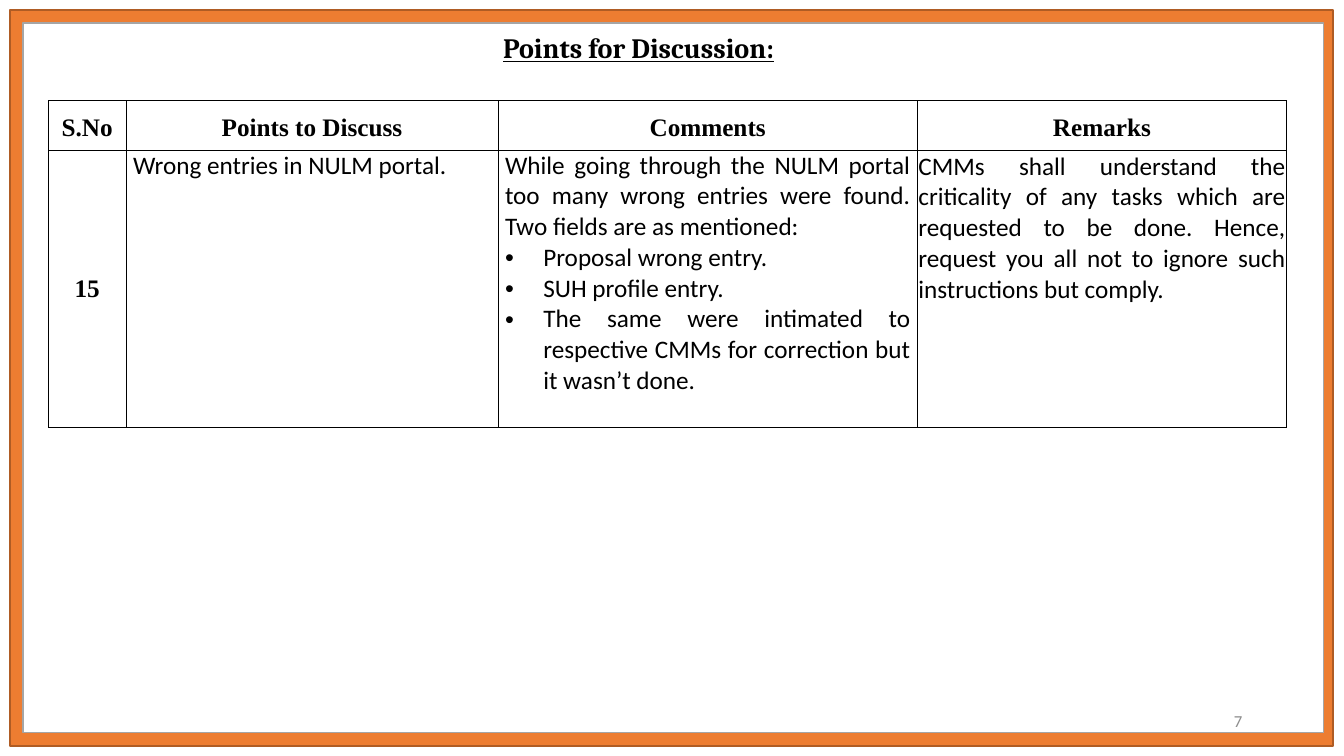
from lxml import etree
from pptx import Presentation
from pptx import util as u
from pptx.dml.color import RGBColor
from pptx.enum import shapes, text
from pptx.oxml import parse_xml
from pptx.oxml.ns import nsdecls, qn

FRAME = [
    ((0.1, 0.1, 13.12, 7.3), "ED7D31", "AF5C24"),
    ((0.23, 0.23, 12.9, 7.04), "FFFFFF", "A5A5A5"),
]
TITLE = "Points for Discussion:"
PAGE = "7"
HEADERS = ["S.No", "Points to Discuss", "Comments", "Remarks"]
NUMBER = "15"
POINT = "Wrong entries in NULM portal."
COMMENT = ("While going through the NULM portal too many wrong entries were found. "
           "Two fields are as mentioned:")
BULLETS = [
    "Proposal wrong entry.",
    "SUH profile entry.",
    "The same were intimated to respective CMMs for correction but it wasn’t done.",
]
REMARK = ("CMMs shall understand the criticality of any tasks which are requested to be done. "
          "Hence, request you all not to ignore such instructions but comply.")
COLS = [0.77, 3.69, 4.16, 3.66]
ROWS = [0.49, 2.75]
HEAD_INSETS = (0.06, 0, 0.06, 0)
TEXT_INSETS = (0.07, 0, 0.07, 0)
TIGHT_INSETS = (0.01, 0.01, 0.01, 0)
ALIGN = text.PP_ALIGN
ANCHOR = text.MSO_ANCHOR


def rgb(value):
    return RGBColor.from_string(value)


def inches(values):
    return [u.Inches(v) for v in values]


def write(tf, lines, size=18, font="Calibri", color="000000", bold=False,
          underline=False, align=ALIGN.CENTER, spacing=None, bullets_from=None):
    for i, line in enumerate(lines):
        p = tf.paragraphs[0] if i == 0 else tf.add_paragraph()
        p.alignment = align
        if spacing:
            p.line_spacing = spacing
        if bullets_from is not None and i >= bullets_from:
            pPr = p._p.get_or_add_pPr()
            pPr.set("marL", str(u.Inches(0.38)))
            pPr.set("indent", str(u.Inches(-0.38)))
            etree.SubElement(pPr, qn("a:buFont")).set("typeface", "Arial")
            etree.SubElement(pPr, qn("a:buChar")).set("char", "•")
        r = p.add_run()
        r.text = line
        f = r.font
        f.size, f.name, f.bold, f.underline = u.Pt(size), font, bold, underline
        f.color.rgb = rgb(color)


def text_box(s, box, line, **fmt):
    tf = s.shapes.add_textbox(*inches(box)).text_frame
    tf.word_wrap = True
    tf.vertical_anchor = ANCHOR.MIDDLE
    write(tf, [line], **fmt)


def fill_cell(cell, lines, insets, anchor=ANCHOR.TOP, **fmt):
    cell.fill.solid()
    cell.fill.fore_color.rgb = rgb("FFFFFF")
    cell.vertical_anchor = anchor
    cell.margin_left, cell.margin_top, cell.margin_right, cell.margin_bottom = inches(insets)
    tcPr = cell._tc.get_or_add_tcPr()
    for i, side in enumerate("LRTB"):
        tcPr.insert(i, parse_xml(
            f'<a:ln{side} {nsdecls("a")} w="{u.Pt(0.5)}"><a:solidFill>'
            f'<a:srgbClr val="000000"/></a:solidFill></a:ln{side}>'))
    write(cell.text_frame, lines, **fmt)


def main():
    prs = Presentation()
    prs.slide_width, prs.slide_height = inches((13.33, 7.5))
    s = prs.slides.add_slide(prs.slide_layouts[6])

    for box, fill, line in FRAME:
        sp = s.shapes.add_shape(shapes.MSO_SHAPE.RECTANGLE, *inches(box))
        sp.shadow.inherit = False
        sp.fill.solid()
        sp.fill.fore_color.rgb = rgb(fill)
        sp.line.color.rgb = rgb(line)
        sp.line.width = u.Pt(1)

    text_box(s, (9.42, 6.95, 3, 0.4), PAGE, size=12, color="8C8C8C", align=ALIGN.RIGHT)
    text_box(s, (0.45, 0.37, 11.77, 0.24), TITLE, size=20, font="Cambria",
             bold=True, underline=True, spacing=0.9)

    box = inches((0.48, 1.0, sum(COLS), sum(ROWS)))
    table = s.shapes.add_table(len(ROWS), len(COLS), *box).table
    table.first_row = table.horz_banding = False
    for column, width in zip(table.columns, COLS):
        column.width = u.Inches(width)
    for row, height in zip(table.rows, ROWS):
        row.height = u.Inches(height)

    strong = dict(anchor=ANCHOR.MIDDLE, font="Times New Roman", bold=True)
    for c, header in enumerate(HEADERS):
        fill_cell(table.cell(0, c), [header], HEAD_INSETS, spacing=1.15, **strong)
    fill_cell(table.cell(1, 0), [NUMBER], TIGHT_INSETS, **strong)
    fill_cell(table.cell(1, 1), [POINT], TEXT_INSETS, align=ALIGN.JUSTIFY)
    fill_cell(table.cell(1, 2), [COMMENT, *BULLETS], TEXT_INSETS,
              align=ALIGN.JUSTIFY, bullets_from=1)
    fill_cell(table.cell(1, 3), [REMARK], TIGHT_INSETS, align=ALIGN.JUSTIFY)

    prs.save("out.pptx")


if __name__ == "__main__":
    main()
